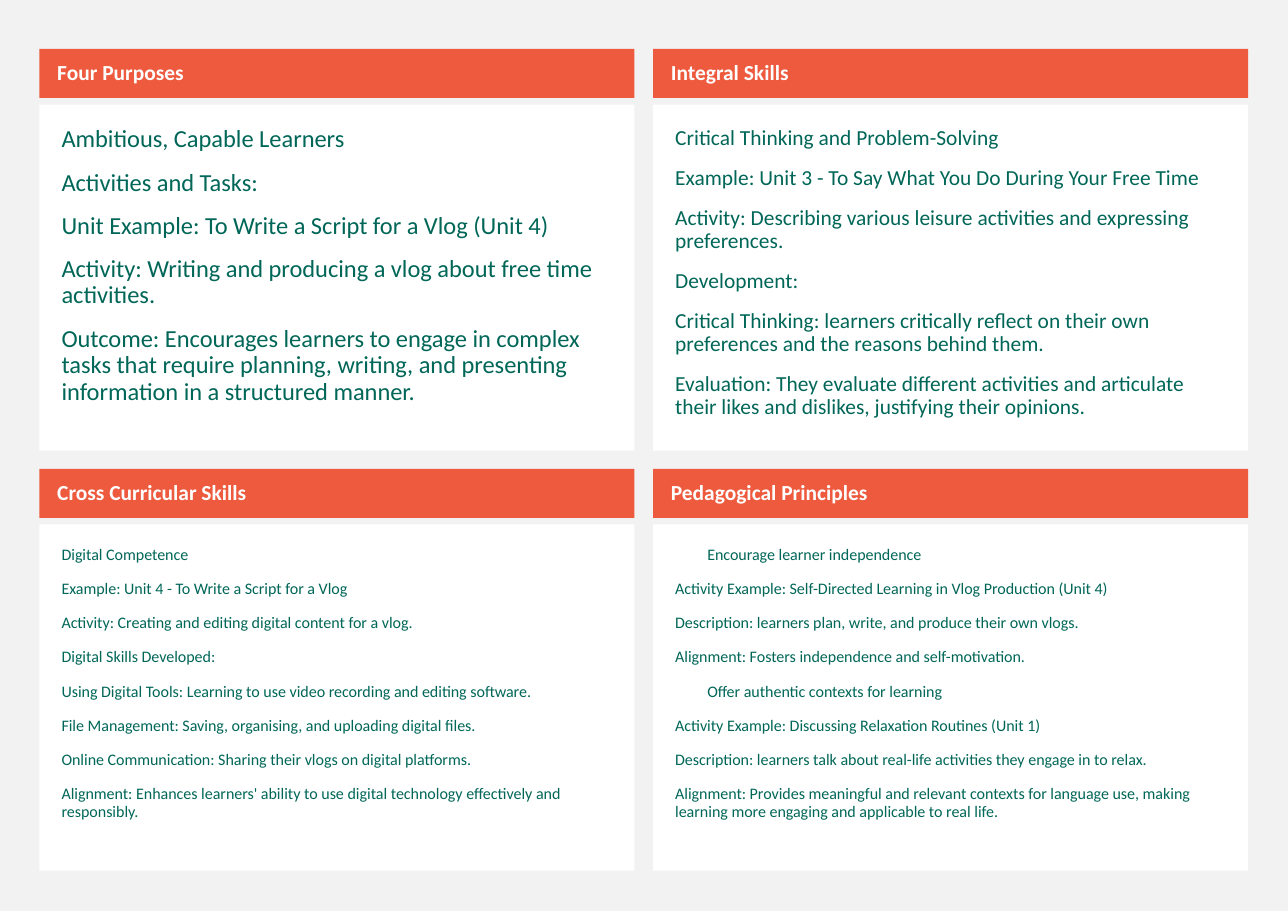
"""Build a slide of four titled panels on curriculum skills and principles."""
from pptx import Presentation
from pptx.dml.color import RGBColor
from pptx.enum.shapes import MSO_SHAPE
from pptx.enum.text import MSO_ANCHOR, PP_ALIGN
from pptx.util import Cm, Pt

RECTANGLE = MSO_SHAPE.RECTANGLE
TOP, MIDDLE = MSO_ANCHOR.TOP, MSO_ANCHOR.MIDDLE
LEFT = PP_ALIGN.LEFT

GREY = RGBColor(0xF2, 0xF2, 0xF2)
WHITE = RGBColor(0xFF, 0xFF, 0xFF)
ORANGE = RGBColor(0xED, 0x5A, 0x3E)
GREEN = RGBColor(0x00, 0x67, 0x58)
FONT = "Calibri"

PANELS = [
    ("Four Purposes", 16, [
        "Ambitious, Capable Learners",
        "Activities and Tasks:",
        "Unit Example: To Write a Script for a Vlog (Unit 4)",
        "Activity: Writing and producing a vlog about free time activities.",
        "Outcome: Encourages learners to engage in complex tasks that require planning, "
        "writing, and presenting information in a structured manner.",
    ]),
    ("Integral Skills", 14, [
        "Critical Thinking and Problem-Solving",
        "Example: Unit 3 - To Say What You Do During Your Free Time",
        "Activity: Describing various leisure activities and expressing preferences.",
        "Development:",
        "Critical Thinking: learners critically reflect on their own preferences "
        "and the reasons behind them.",
        "Evaluation: They evaluate different activities and articulate their likes "
        "and dislikes, justifying their opinions.",
    ]),
    ("Cross Curricular Skills", 10.5, [
        "Digital Competence",
        "Example: Unit 4 - To Write a Script for a Vlog",
        "Activity: Creating and editing digital content for a vlog.",
        "Digital Skills Developed:",
        "Using Digital Tools: Learning to use video recording and editing software.",
        "File Management: Saving, organising, and uploading digital files.",
        "Online Communication: Sharing their vlogs on digital platforms.",
        "Alignment: Enhances learners' ability to use digital technology effectively "
        "and responsibly.",
    ]),
    ("Pedagogical Principles", 10.5, [
        "Encourage learner independence",
        "Activity Example: Self-Directed Learning in Vlog Production (Unit 4)",
        "Description: learners plan, write, and produce their own vlogs.",
        "Alignment: Fosters independence and self-motivation.",
        "Offer authentic contexts for learning",
        "Activity Example: Discussing Relaxation Routines (Unit 1)",
        "Description: learners talk about real-life activities they engage in to relax.",
        "Alignment: Provides meaningful and relevant contexts for language use, making "
        "learning more engaging and applicable to real life.",
    ]),
]
INDENTED = {"Encourage learner independence", "Offer authentic contexts for learning"}

COLUMNS = 2
PANEL_LEFT, PANEL_TOP = Cm(0.91), Cm(1.13)
COLUMN_STEP, ROW_STEP = Cm(14.15), Cm(9.68)
PANEL_WIDTH = Cm(13.72)
HEADING_HEIGHT = Cm(1.13)
BODY_OFFSET, BODY_HEIGHT = Cm(1.28), Cm(7.98)
HEADING_INSETS = Cm(0.41), Cm(0.13), Cm(0.25), Cm(0.13)
BODY_INSETS = (Cm(0.51),) * 4
PRINCIPLE_INDENT = Cm(0.74)


def add_block(slide, lines, box, *, fill, color, size, insets, anchor=TOP, bold=False):
    """Draw a filled rectangle holding one paragraph for each line."""
    block = slide.shapes.add_shape(RECTANGLE, *box)
    block.shadow.inherit = False
    block.fill.solid()
    block.fill.fore_color.rgb = fill
    block.line.fill.background()
    frame = block.text_frame
    frame.word_wrap = True
    frame.vertical_anchor = anchor
    frame.margin_left, frame.margin_top, frame.margin_right, frame.margin_bottom = insets
    for index, line in enumerate(lines):
        paragraph = frame.add_paragraph() if index else frame.paragraphs[0]
        paragraph.alignment = LEFT
        paragraph.line_spacing = 0.9
        paragraph.space_before = Pt(11)
        if line in INDENTED:
            paragraph._p.get_or_add_pPr().set("marL", str(PRINCIPLE_INDENT))
        run = paragraph.add_run()
        run.text = line
        run.font.name = FONT
        run.font.size = Pt(size)
        run.font.bold = bold
        run.font.color.rgb = color


def main():
    """Lay the panels out in a grid and save the slide."""
    deck = Presentation()
    deck.slide_width, deck.slide_height = Cm(29.7), Cm(21)
    slide = deck.slides.add_slide(deck.slide_layouts[6])
    slide.background.fill.solid()
    slide.background.fill.fore_color.rgb = GREY

    for index, (heading, body_size, body) in enumerate(PANELS):
        row, column = divmod(index, COLUMNS)
        left = PANEL_LEFT + column * COLUMN_STEP
        top = PANEL_TOP + row * ROW_STEP
        add_block(slide, body, (left, top + BODY_OFFSET, PANEL_WIDTH, BODY_HEIGHT),
                  fill=WHITE, color=GREEN, size=body_size, insets=BODY_INSETS)
        add_block(slide, [heading], (left, top, PANEL_WIDTH, HEADING_HEIGHT),
                  fill=ORANGE, color=WHITE, size=14, insets=HEADING_INSETS,
                  anchor=MIDDLE, bold=True)

    deck.save("out.pptx")


if __name__ == "__main__":
    main()
